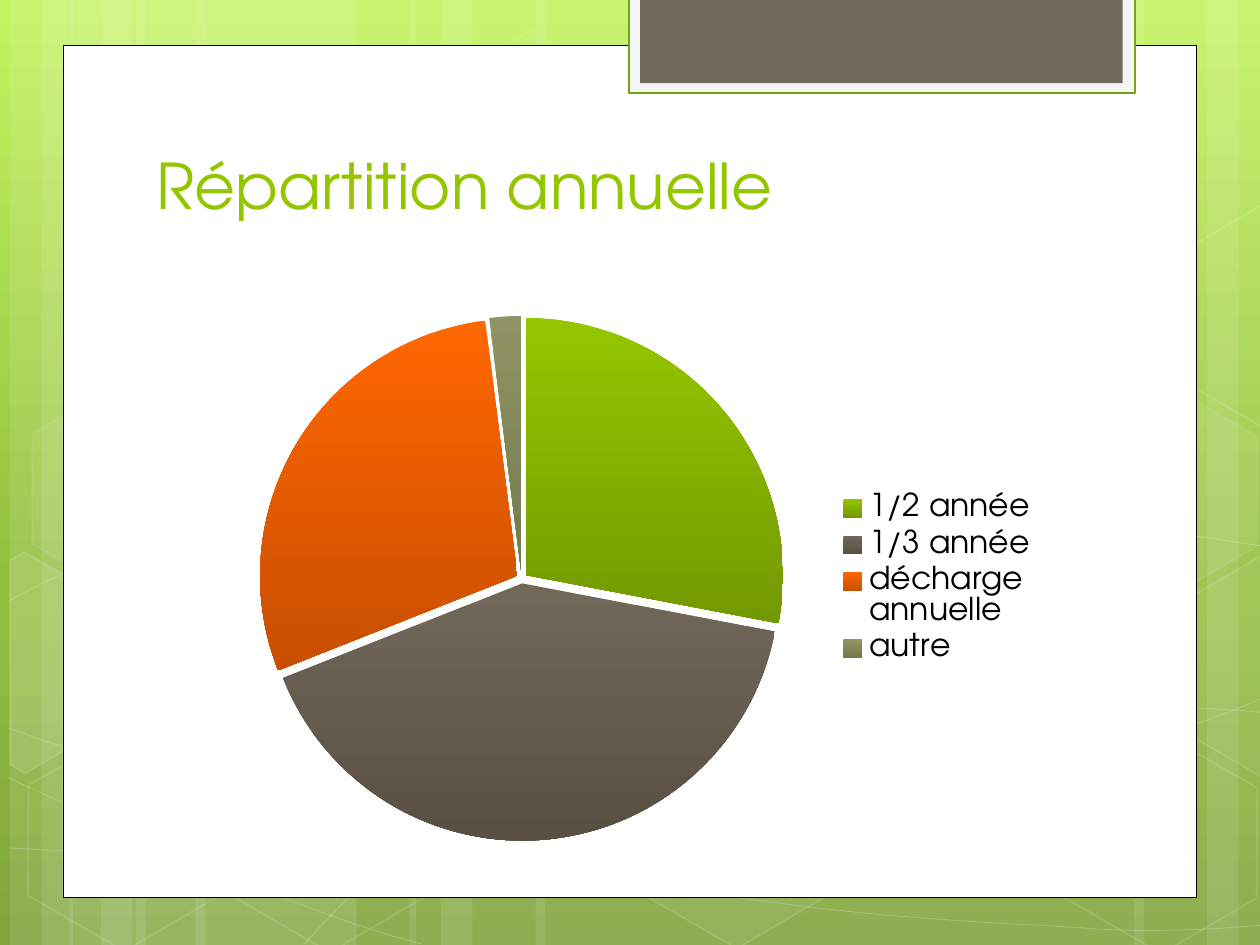
import pptx
import pptx.chart.data
import pptx.dml.color
import pptx.enum.chart
import pptx.enum.shapes
import pptx.enum.text
import pptx.oxml
import pptx.oxml.ns
import pptx.util
import copy

Inches, Pt = pptx.util.Inches, pptx.util.Pt
RGB = pptx.dml.color.RGBColor.from_string
SHAPE = pptx.enum.shapes.MSO_SHAPE
qn = pptx.oxml.ns.qn
FONT = "TeX Gyre Adventor"
COLORS = {"white": "FFFFFF", "black": "000000", "green": "94C600", "frame": "74A510",
          "tab_edge": "F5F5F5", "tab": "71685A"}

# Content
TITLE = "Répartition annuelle"
SLICES = [  # category, value, top colour, bottom colour
    ("1/2 année", 28, "94C600", "739900"),
    ("1/3 année", 41, "71685A", "594F43"),
    ("décharge annuelle", 29, "FF6700", "C84E00"),
    ("autre", 2, "909465", "737A4B"),
]
BACKGROUND = [(0, "C3F35F"), (0.62, "93BF3F"), (1, "81A53E")]

# Backdrop: left, width and rotation of each vertical band
BANDS = [(1.08, 1.75, 0), (0.08, 0.5, 0), (0.33, 0.83, 0), (1.55, 1.75, 0), (0.55, 0.5, 0),
         (0.8, 0.83, 0), (7.33, 1.75, 180), (9.58, 0.5, 180), (9, 0.83, 180),
         (4.25, 3.08, 0), (3.25, 0.5, 0), (3.5, 0.83, 0)]
# Each curve: a start point, then groups of three Bezier points
CURVES = [
    [(0.07, 6.73), (0.61, 6.76), (1.15, 6.79), (1.9, 6.78), (2.65, 6.77), (3.58, 6.75),
     (4.58, 6.65), (5.58, 6.55), (7, 6.36), (7.92, 6.17), (8.83, 5.98), (9.77, 5.68),
     (10.07, 5.51)],
    [(0.07, 4.77), (0.36, 4.61), (0.65, 4.46), (1.21, 4.31), (1.78, 4.16), (2.59, 3.94),
     (3.47, 3.87), (4.36, 3.8), (5.44, 3.79), (6.54, 3.87), (7.64, 3.95), (9.47, 4.26),
     (10.07, 4.34)],
    [(0.06, 6.17), (1.27, 6.72), (2.47, 7.27), (3.34, 7.49)],
    [(0.07, 5.78), (0.38, 5.89), (0.7, 6), (1.28, 6.16), (1.86, 6.31), (2.73, 6.56),
     (3.57, 6.73), (4.4, 6.9), (5.45, 7.08), (6.28, 7.18), (7.11, 7.29), (8, 7.33),
     (8.53, 7.36), (9.05, 7.4), (9.19, 7.38), (9.45, 7.38), (9.71, 7.37), (9.89, 7.35),
     (10.07, 7.34)],
    [(2.42, 7.49), (2.6, 7.29), (2.78, 7.09), (3.02, 6.91), (3.26, 6.73), (3.6, 6.53),
     (3.88, 6.39), (4.16, 6.25), (4.33, 6.19), (4.7, 6.09), (5.06, 5.99), (5.73, 5.85),
     (6.08, 5.78), (6.44, 5.71), (6.49, 5.71), (6.8, 5.69), (7.11, 5.66), (7.6, 5.63),
     (7.94, 5.62), (8.29, 5.61), (8.86, 5.62), (8.86, 5.62), (9.53, 5.62), (9.71, 5.63),
     (9.88, 5.64), (9.97, 5.65), (10.06, 5.66), (10.03, 5.65), (10.06, 5.66)],
]
STRAIGHT_ENDS = {(9.53, 5.62)}  # points reached by a straight line
# Left, top, fill opacity (None for no fill), line opacity
HEXAGONS = [(3.34, 0.36, 4, 8), (4.97, 5.89, 6, 12), (0.11, 5.91, None, 12),
            (0.14, 3.12, 7, 8), (1.74, 5.92, None, 12), (7.53, 4.53, 10, 12),
            (8.34, 5.93, None, 12), (8.34, 3.14, 7, 8)]
# Hexagons cut by the slide edge: points, fill opacity
CUT_HEXAGONS = [
    ([(0.08, 4.45), (0.19, 4.38), (0.96, 4.82), (0.95, 5.7), (0.2, 6.14), (0.08, 6.07)], 10),
    ([(9.26, 4.85), (10.01, 4.41), (10.09, 4.46), (10.09, 6.13), (10.02, 6.17),
      (9.26, 5.73)], 4),
    ([(9.26, 2.07), (10.01, 1.63), (10.1, 1.68), (10.09, 3.35), (10.02, 3.39),
      (9.26, 2.95)], None),
]
# Left, top, width, height, fill, line, line width
PANELS = [(0.5, 0.36, 9, 6.76, "white", "black", 0.5),
          (4.99, -0.02, 4.02, 0.76, "tab_edge", "frame", 1.25),
          (5.08, -0.02, 3.83, 0.68, "tab", None, 0)]


def solid(fill, color, opacity):
    fill.solid()
    fill.fore_color.rgb = RGB(COLORS[color])
    if opacity < 100:
        clr = fill._xPr.find(qn("a:solidFill")).find(qn("a:srgbClr"))
        clr.append(clr.makeelement(qn("a:alpha"), {"val": str(opacity * 1000)}))


def style(s, fill=None, opacity=100, line=None, width=0, line_opacity=100):
    s.shadow.inherit = False
    if fill and opacity:
        solid(s.fill, fill, opacity)
    else:
        s.fill.background()
    if line:
        s.line.width = Pt(width)
        solid(s.line.fill, line, line_opacity)
    else:
        s.line.fill.background()


def add_preset(kind, *box):
    return slide.shapes.add_shape(kind, *map(Inches, box))


def add_path(points, close):
    (start, *rest) = [(Inches(x), Inches(y)) for x, y in points]
    builder = slide.shapes.build_freeform(*start, scale=1.0)
    builder.add_line_segments(rest, close=close)
    return builder.convert_to_shape()


def add_curve(points):
    s = add_path(points, False)
    steps = list(s._element.iter(qn("a:lnTo")))
    i = 0
    while i < len(steps):
        if points[i + 1] in STRAIGHT_ENDS:
            i += 1
            continue
        bezier = steps[i].makeelement(qn("a:cubicBezTo"), {})
        steps[i].addprevious(bezier)
        for step in steps[i:i + 3]:
            bezier.append(step[0])
            step.getparent().remove(step)
        i += 3
    return s


def gradient(fill, stops):
    fill.gradient()
    fill.gradient_angle = 270
    stop_list = fill.gradient_stops[0]._gs.getparent()
    for _ in stops[2:]:
        stop_list.append(copy.deepcopy(stop_list[-1]))
    for stop, (position, color) in zip(fill.gradient_stops, stops):
        stop.position = position
        stop.color.rgb = RGB(color)


prs = pptx.Presentation()
prs.slide_width, prs.slide_height = Inches(10), Inches(7.5)
slide = prs.slides.add_slide(prs.slide_layouts[6])
gradient(slide.background.fill, BACKGROUND)

# Backdrop
for left, width, rotation in BANDS:
    s = add_preset(SHAPE.RECTANGLE, left, 0, width, 7.5)
    s.rotation = rotation
    style(s, "white", 10)
for curve in CURVES:
    style(add_curve(curve), line="white", width=0.5, line_opacity=20)
for left, top, opacity, line_opacity in HEXAGONS:
    s = add_preset(SHAPE.HEXAGON, left, top, 1.75, 1.52)
    s.adjustments[0] = 0.285
    s.rotation = 30
    style(s, "white", opacity, "white", 1, line_opacity)
for points, opacity in CUT_HEXAGONS:
    style(add_path(points, True), "white", opacity, "white", 1, 12)

# Page and tab
for *box, fill, line, width in PANELS:
    style(add_preset(SHAPE.RECTANGLE, *box), fill, 100, line, width)

# Title
tf = slide.shapes.add_textbox(*map(Inches, (1.14, 1.12, 7.68, 0.69))).text_frame
tf.word_wrap = True
tf.vertical_anchor = pptx.enum.text.MSO_ANCHOR.BOTTOM
r = tf.paragraphs[0].add_run()
r.text = TITLE
r.font.name, r.font.size = FONT, Pt(36)
r.font.color.rgb = RGB(COLORS["green"])

# Pie chart
data = pptx.chart.data.CategoryChartData()
data.categories = [name for name, *_ in SLICES]
data.add_series("Series 1", [value for _, value, *_ in SLICES])
chart = slide.shapes.add_chart(pptx.enum.chart.XL_CHART_TYPE.PIE,
                               *map(Inches, (1.67, 2.37, 6.67, 4.44)), data).chart
chart.has_title = False
chart.has_legend = True
chart.legend.position = pptx.enum.chart.XL_LEGEND_POSITION.RIGHT
chart.legend.include_in_layout = False
chart.font.name, chart.font.size = FONT, Pt(18)
chart.font.color.rgb = RGB(COLORS["black"])
plot = chart.plots[0]
plot.vary_by_categories = True
series = plot.series[0]
tx = series._element.find(qn("c:tx"))
tx.addnext(tx.makeelement(qn("c:explosion"), {"val": "2"}))
for i, (_, _, top, bottom) in enumerate(SLICES):
    fmt = series.points[i].format
    gradient(fmt.fill, [(0, top), (1, bottom)])
    fmt.line.fill.background()

prs.save("out.pptx")
